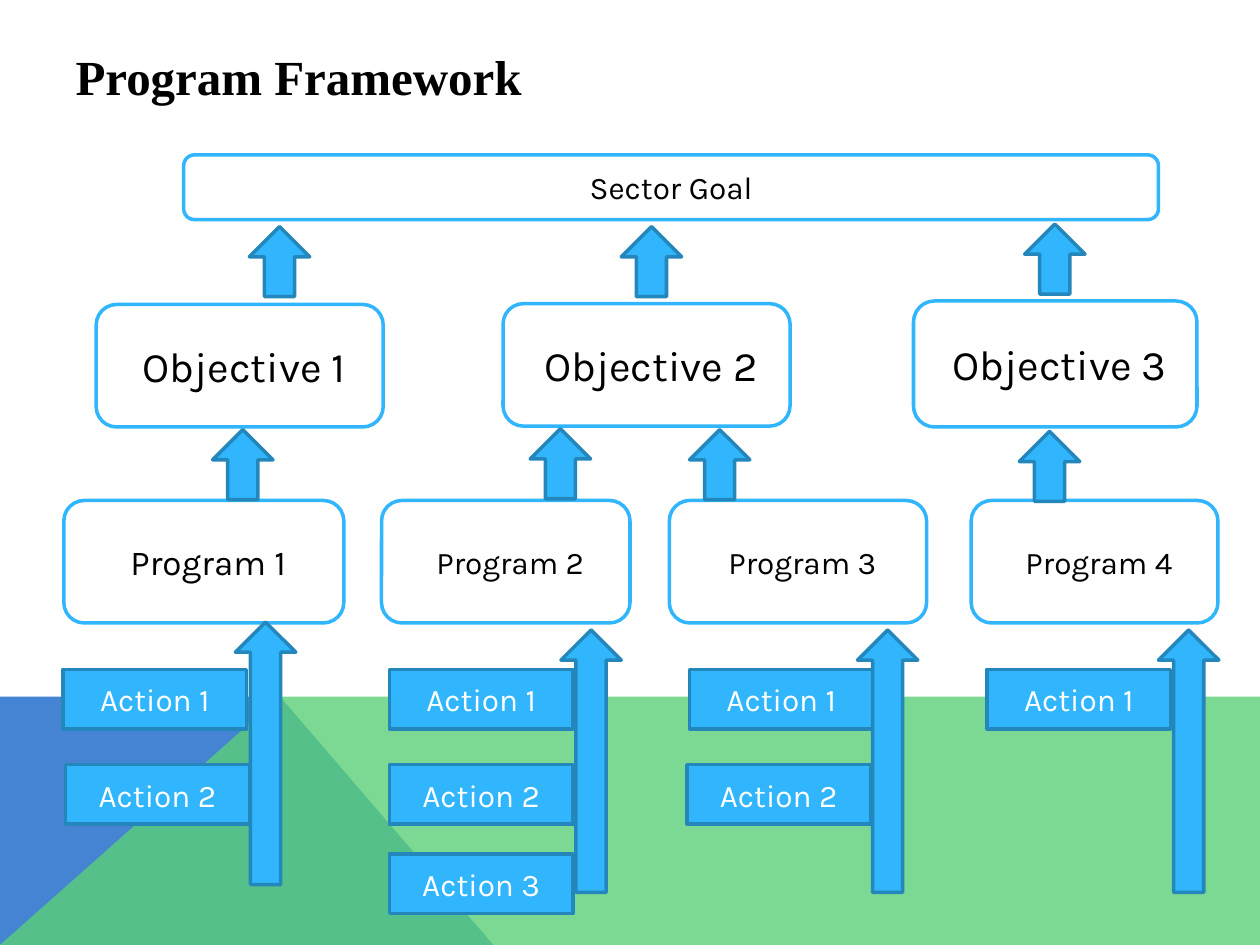
from lxml.etree import SubElement
from pptx import Presentation
from pptx.dml.color import RGBColor as RGB
from pptx.enum.shapes import MSO_SHAPE as Kind
from pptx.enum.text import MSO_ANCHOR as Anchor, MSO_AUTO_SIZE as Fit, PP_ALIGN as Align
from pptx.oxml.ns import qn
from pptx.util import Pt

HUES = {
    "ink": "000000", "white": "FFFFFF", "sky": "31B6FD", "edge": "2487BB",
    "blue": "4584D3", "green": "5BD078",
}

# label, left, top, width, height, text size
BOXES = [
    ("Sector Goal", 105, 88.5, 557, 37, 18),
    ("Objective 1", 55, 174, 164, 70, 24),
    ("Objective 2", 287.5, 173.5, 164, 70, 24),
    ("Objective 3", 522, 172, 162, 72, 24),
    ("Program 1", 36.5, 286, 160, 70, 20),
    ("Program 2", 218, 286, 142, 70, 18),
    ("Program 3", 382.5, 286, 147, 70, 18),
    ("Program 4", 555, 286, 141, 70, 18),
]

# tops of the action rows, then the lefts of each program's actions
ROWS = (382.5, 437, 488)
ACTIONS = [(36, 37.5), (222.5, 222.5, 222.5), (394, 392.5), (564,)]

# left and top of each arrow, grouped by height
ARROWS = {
    150: [(134.5, 355.5), (320.5, 360), (490, 360), (662, 360)],
    40: [(121.5, 245.5), (303, 245), (394, 245.5), (582.5, 246.5),
         (142.5, 129.5), (355, 129.5), (585.5, 128)],
}


class Board:
    font = "Karla"
    head = "Times New Roman"
    line = 2

    def __init__(self, deck):
        self.slide = deck.slides.add_slide(deck.slide_layouts[5])
        self.shapes = self.slide.shapes

    def paint(self, shape, fill, edge=None):
        shape.shadow.inherit = False
        shape.fill.solid()
        shape.fill.fore_color.rgb = RGB.from_string(HUES[fill])
        if edge:
            shape.line.color.rgb = RGB.from_string(HUES[edge])
            shape.line.width = Pt(self.line)
        else:
            shape.line.fill.background()

    def label(self, shape, text, size, hue, font, align=Align.CENTER, bold=False):
        frame = shape.text_frame
        frame.text = text
        frame.word_wrap = True
        frame.auto_size = Fit.NONE
        frame.vertical_anchor = Anchor.MIDDLE
        para = frame.paragraphs[0]
        para.alignment = align
        para.font.name = font
        para.font.size = Pt(size)
        para.font.bold = bold
        para.font.color.rgb = RGB.from_string(HUES[hue])

    def title(self, text, *place):
        shape = self.shapes.title
        shape.left, shape.top, shape.width, shape.height = map(Pt, place)
        self.label(shape, text, 28, "ink", self.head, Align.LEFT, True)

    def area(self, points, fill, alpha=None):
        """Draw a filled outline, with alpha as percent opacity."""
        start, *rest = points
        outline = self.shapes.build_freeform(*start, scale=Pt(1))
        outline.add_line_segments(rest)
        shape = outline.convert_to_shape()
        self.paint(shape, fill)
        if alpha:
            tone = shape.element.spPr.find(f"{qn('a:solidFill')}/{qn('a:srgbClr')}")
            SubElement(tone, qn("a:alpha"), val=str(alpha * 1000))

    def box(self, text, left, top, width, height, size, inset=0):
        shape = self.shapes.add_shape(
            Kind.ROUNDED_RECTANGLE, *map(Pt, (left, top, width, height)))
        self.paint(shape, "white", "sky")
        self.label(shape, text, size, "ink", self.font)
        shape.text_frame.margin_left += Pt(inset)

    def action(self, text, left, top):
        shape = self.shapes.add_shape(
            Kind.RECTANGLE, Pt(left), Pt(top), Pt(105), Pt(34))
        self.paint(shape, "sky", "edge")
        self.label(shape, text, 18, "white", self.font)

    def arrow(self, left, top, height):
        shape = self.shapes.add_shape(
            Kind.UP_ARROW, Pt(left), Pt(top), Pt(34.5), Pt(height))
        self.paint(shape, "sky", "edge")


def main():
    deck = Presentation()
    deck.slide_width, deck.slide_height = Pt(720), Pt(540)
    board = Board(deck)

    board.area([(0, 540), (0, 397.5), (160.5, 397.5), (281.5, 540)], "blue")
    board.area([(0, 540), (160.5, 397.5), (720, 397.5), (720, 540)], "green", 80)
    board.title("Program Framework", 36, 21, 648, 45)

    for text, *place in BOXES:
        board.box(text, *place, inset=0 if text == "Sector Goal" else 5)
    for lefts in ACTIONS:
        for i, (left, top) in enumerate(zip(lefts, ROWS), 1):
            board.action(f"Action {i}", left, top)
    for height, spots in ARROWS.items():
        for left, top in spots:
            board.arrow(left, top, height)

    deck.save("out.pptx")


if __name__ == "__main__":
    main()
